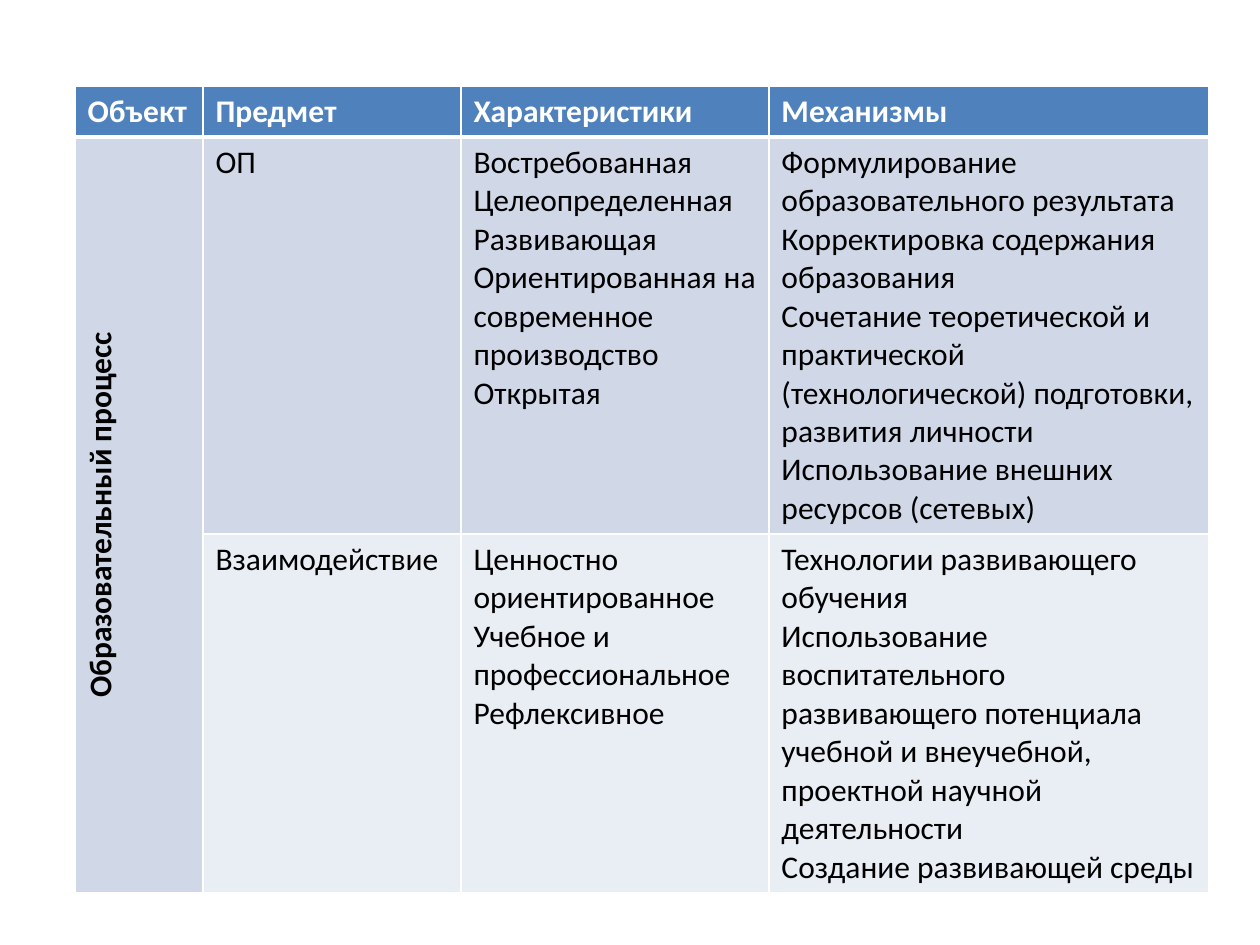
from dataclasses import dataclass

from lxml import etree
from pptx import Presentation
from pptx.dml.color import RGBColor
from pptx.enum.text import PP_ALIGN
from pptx.oxml.ns import qn
from pptx.util import Pt

EMU_PER_PX = 914400 // 126
CENTER = PP_ALIGN.CENTER
WHITE, BLACK = "FFFFFF", "000000"
THIN, THICK = 1, 3

TABLE_LEFT, TABLE_TOP = 75, 86
COLUMN_WIDTHS = [128, 258, 308, 440]


@dataclass
class Row:
    height: int
    fill: str
    color: str
    top_border: int
    bottom_border: int
    cells: list[list[str]]
    bold: bool = False


PROCESS = ["Образовательный процесс"]
ROWS = [
    Row(51, "4F81BD", WHITE, THIN, THICK,
        [["Объект"], ["Предмет"], ["Характеристики"], ["Механизмы"]], bold=True),
    Row(396, "D0D8E8", BLACK, THICK, THIN, [
        PROCESS,
        ["ОП"],
        ["Востребованная", "Целеопределенная", "Развивающая",
         "Ориентированная на современное производство", "Открытая"],
        ["Формулирование образовательного результата",
         "Корректировка содержания образования",
         "Сочетание теоретической и практической (технологической) подготовки, "
         "развития личности",
         "Использование внешних ресурсов (сетевых)"],
    ]),
    Row(358, "E9EDF4", BLACK, THIN, THIN, [
        [],
        ["Взаимодействие"],
        ["Ценностно ориентированное", "Учебное и профессиональное", "Рефлексивное"],
        ["Технологии развивающего обучения",
         "Использование воспитательного развивающего потенциала учебной и внеучебной, "
         "проектной научной деятельности",
         "Создание развивающей среды"],
    ]),
]


def px(length: int) -> int:
    return length * EMU_PER_PX


def rgb(color: str) -> RGBColor:
    return RGBColor.from_string(color)


def add_borders(cell, top: int, bottom: int) -> None:
    """Draw white cell borders; must run before the cell is filled."""
    properties = cell._tc.get_or_add_tcPr()
    for side, width in {"L": THIN, "R": THIN, "T": top, "B": bottom}.items():
        line = etree.SubElement(properties, qn(f"a:ln{side}"), w=str(Pt(width)))
        solid = etree.SubElement(line, qn("a:solidFill"))
        etree.SubElement(solid, qn("a:srgbClr"), val=WHITE)


def write_cell(cell, lines: list[str], color: str, bold: bool) -> None:
    frame = cell.text_frame
    frame.text = "\n".join(lines)
    font_format = {"name": "Calibri", "size": Pt(18), "bold": bold}
    for paragraph in frame.paragraphs:
        for run in paragraph.runs:
            for attribute, value in font_format.items():
                setattr(run.font, attribute, value)
            run.font.color.rgb = rgb(color)


def fill_row(table, index: int, row: Row) -> None:
    table.rows[index].height = px(row.height)
    for cell, lines in zip(table.rows[index].cells, row.cells):
        add_borders(cell, row.top_border, row.bottom_border)
        cell.fill.solid()
        cell.fill.fore_color.rgb = rgb(row.fill)
        write_cell(cell, lines, row.color, row.bold or lines is PROCESS)


def main() -> None:
    deck = Presentation()
    deck.slide_width, deck.slide_height = px(1260), px(945)
    slide = deck.slides.add_slide(deck.slide_layouts[6])
    table = slide.shapes.add_table(
        len(ROWS), len(COLUMN_WIDTHS), px(TABLE_LEFT), px(TABLE_TOP),
        px(sum(COLUMN_WIDTHS)), px(sum(row.height for row in ROWS))).table
    for column, width in zip(table.columns, COLUMN_WIDTHS):
        column.width = px(width)
    for index, row in enumerate(ROWS):
        fill_row(table, index, row)

    process_cell = table.cell(1, 0)
    process_cell.merge(table.cell(2, 0))
    process_cell._tc.get_or_add_tcPr().set("vert", "vert270")
    process_cell.text_frame.paragraphs[0].alignment = CENTER
    deck.save("out.pptx")


if __name__ == "__main__":
    main()
